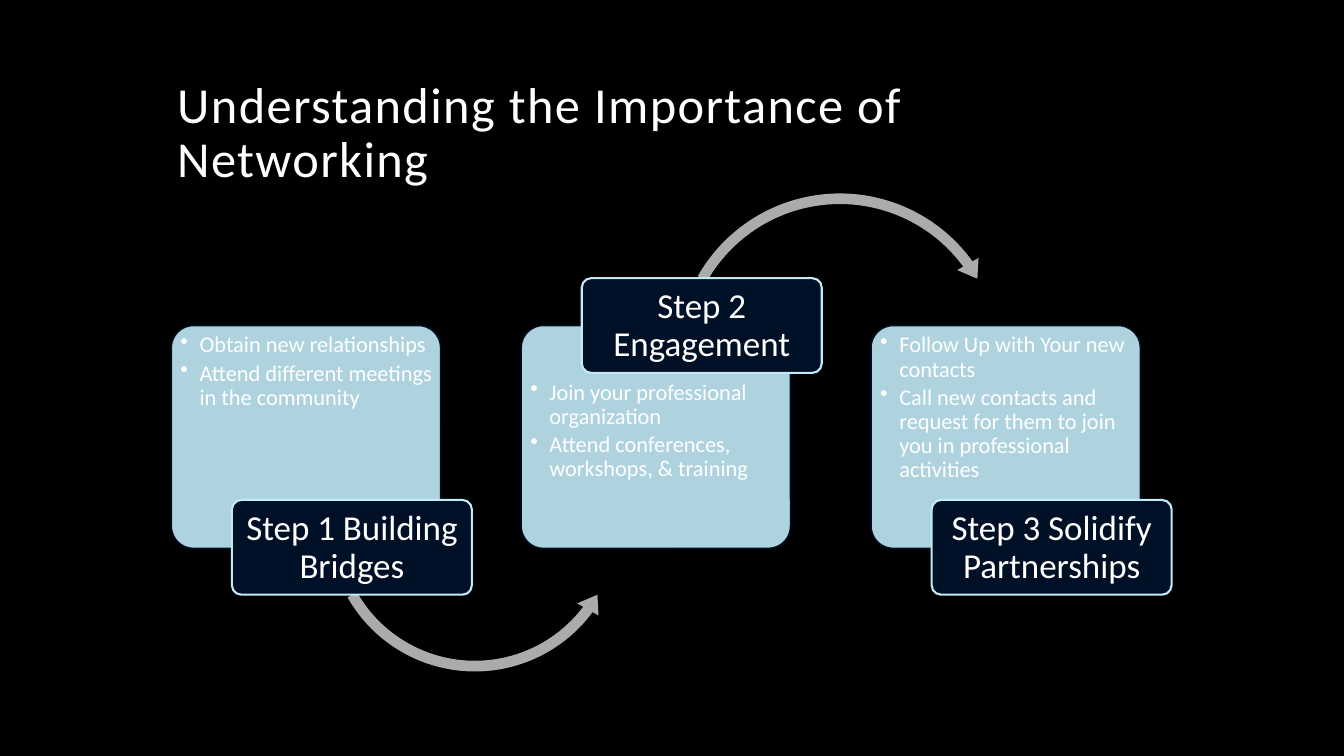
from pptx import Presentation
from pptx.dml.color import RGBColor
from pptx.enum.shapes import MSO_SHAPE as Preset
from pptx.enum.text import MSO_ANCHOR as Anchor, PP_ALIGN as Align
from pptx.oxml.xmlchemy import OxmlElement
from pptx.util import Inches, Pt

WHITE, NAVY, ICE, GREY = "FFFFFF", "001027", "C1EBF7", "ABABAD"
STEP_LEFT, STEP_PITCH = 1.7, 3.47
STEPS = [
    {"label": "Step 1 Building Bridges", "label_top": 4.96, "text_top": 3.28,
     "points": ["Obtain new relationships",
                "Attend different meetings in the community"],
     "arrow": (Preset.LEFT_CIRCULAR_ARROW, (3.19, 3.69, 3.04, 3.04),
               (0.035, 4.277, 22.032, 90.245, 0.04))},
    {"label": "Step 2 Engagement", "label_top": 2.76, "text_top": 3.75,
     "points": ["Join your professional organization",
                "Attend conferences, workshops, & training"],
     "arrow": (Preset.CIRCULAR_ARROW, (6.64, 1.85, 3.38, 3.38),
               (0.031, 3.813, 194.431, 125.755, 0.036))},
    {"label": "Step 3 Solidify Partnerships", "label_top": 4.96, "text_top": 3.28,
     "points": ["Follow Up with Your new contacts",
                "Call new contacts and request for them to join you in professional activities"],
     "arrow": None},
]


def color(value):
    return RGBColor.from_string(value)


def apply(target, values):
    for name, value in values.items():
        setattr(target, name, value)


class StepSlide:
    """Draws titles, shapes and texts in one style on the current slide."""

    font = "Calibri"

    def __init__(self, presentation):
        self.slide = presentation.slides.add_slide(presentation.slide_layouts[6])
        background = self.slide.background.fill
        background.solid()
        background.fore_color.rgb = color("000000")

    def shape(self, preset, box, adjustments, fill, line=None, width=1, alpha=None):
        shape = self.slide.shapes.add_shape(preset, *map(Inches, box))
        shape.shadow.inherit = False
        for index, value in enumerate(adjustments):
            shape.adjustments[index] = value
        shape.fill.solid()
        shape.fill.fore_color.rgb = color(fill)
        if alpha:
            opacity = OxmlElement("a:alpha")
            opacity.set("val", str(alpha * 1000))
            shape.fill._xPr.find(".//{*}srgbClr").append(opacity)
        if line:
            shape.line.color.rgb = color(line)
            shape.line.width = Pt(width)
        else:
            shape.line.fill.background()

    def text(self, box, lines, size, insets, anchor=Anchor.TOP, align=Align.LEFT,
             bullets=False, spacing=None):
        frame = self.slide.shapes.add_textbox(*map(Inches, box)).text_frame
        side, edge = map(Inches, insets)
        apply(frame, {"word_wrap": True, "vertical_anchor": anchor,
                      "margin_left": side, "margin_right": side,
                      "margin_top": edge, "margin_bottom": edge})
        for index, line in enumerate(lines):
            paragraph = frame.paragraphs[0] if index == 0 else frame.add_paragraph()
            apply(paragraph, {"alignment": align, "line_spacing": 0.9})
            if bullets:
                paragraph.space_after = Pt(2.9)
                self.bullet(paragraph)
            run = paragraph.add_run()
            run.text = line
            apply(run.font, {"name": self.font, "size": Pt(size)})
            run.font.color.rgb = color(WHITE)
            if spacing:
                run.font._element.set("spc", str(spacing * 100))

    def bullet(self, paragraph):
        properties = paragraph._p.get_or_add_pPr()
        properties.set("marL", str(Inches(0.19)))
        properties.set("indent", str(-Inches(0.19)))
        mark = OxmlElement("a:buChar")
        mark.set("char", "•")
        properties.append(mark)

    def step(self, left, step):
        self.shape(Preset.ROUNDED_RECTANGLE, (left, 3.23, 2.67, 2.21), [0.1],
                   ICE, NAVY, alpha=90)
        self.text((left + 0.06, step["text_top"], 2.57, 1.63), step["points"], 16,
                  (0.03, 0.03), bullets=True)
        if step["arrow"]:
            self.shape(*step["arrow"], GREY)
        label_left, label_top = left + 0.6, step["label_top"]
        self.shape(Preset.ROUNDED_RECTANGLE, (label_left, label_top, 2.38, 0.94), [0.1],
                   NAVY, ICE, 1.5)
        self.text((label_left + 0.03, label_top + 0.03, 2.32, 0.89), [step["label"]], 25,
                  (0.05, 0.03), Anchor.MIDDLE, Align.CENTER)


def main():
    presentation = Presentation()
    apply(presentation, {"slide_width": Inches(13.33), "slide_height": Inches(7.5)})
    page = StepSlide(presentation)
    page.text((1.66, 0.42, 10, 1.5), ["Understanding the Importance of Networking"], 36,
              (0.1, 0.05), Anchor.BOTTOM, spacing=1)
    for index, step in enumerate(STEPS):
        page.step(STEP_LEFT + index * STEP_PITCH, step)
    presentation.save("out.pptx")


if __name__ == "__main__":
    main()
